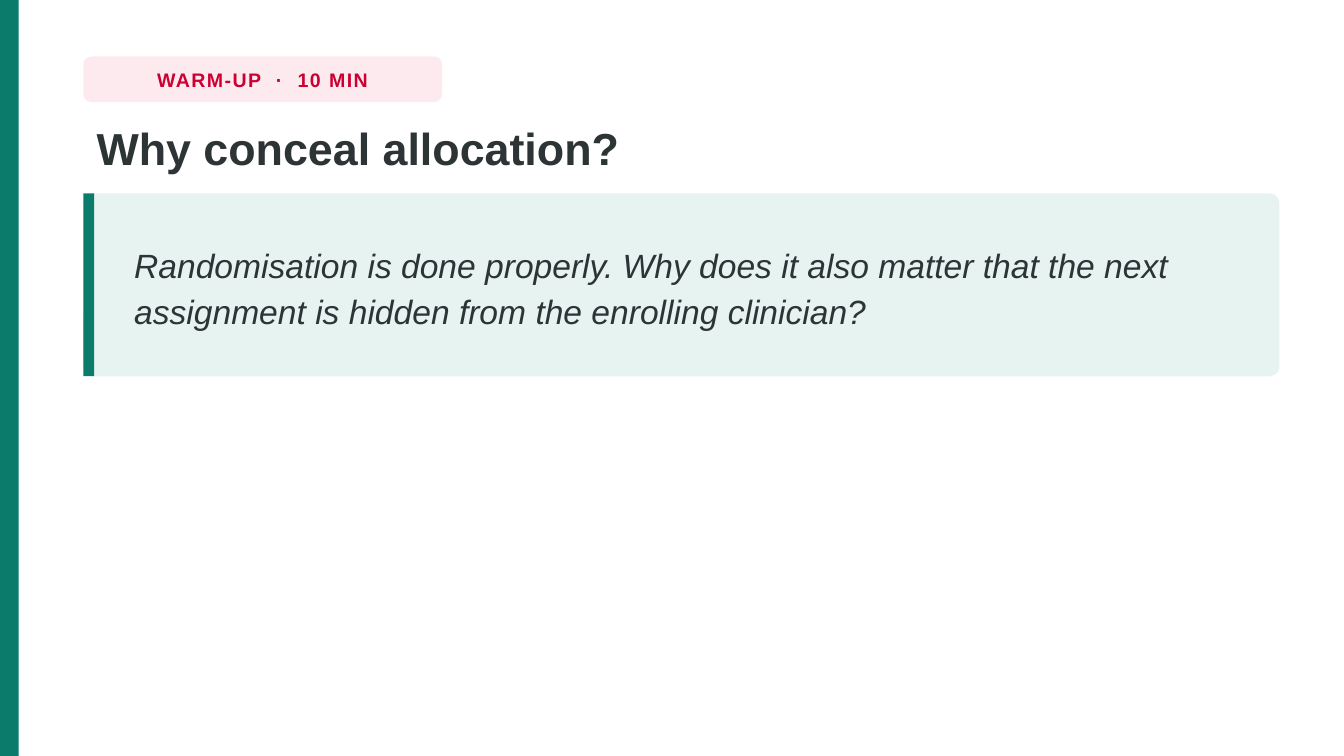
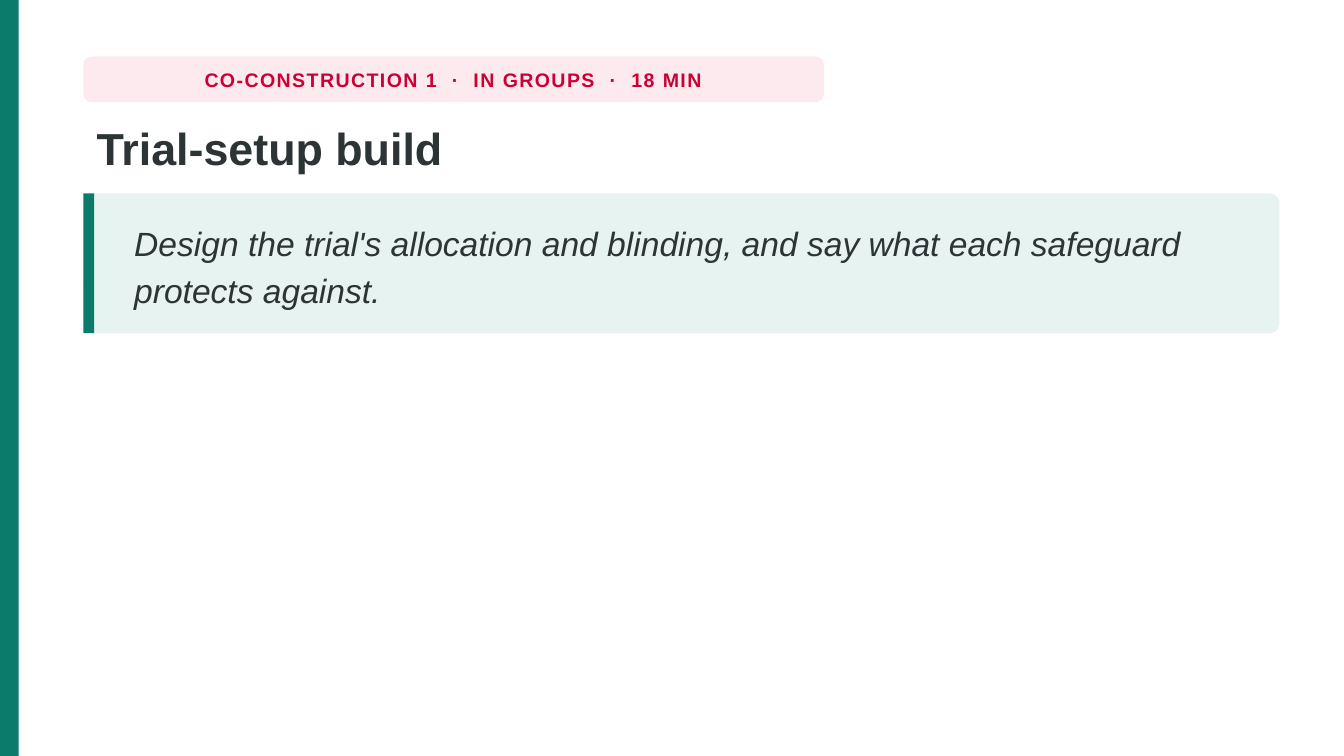
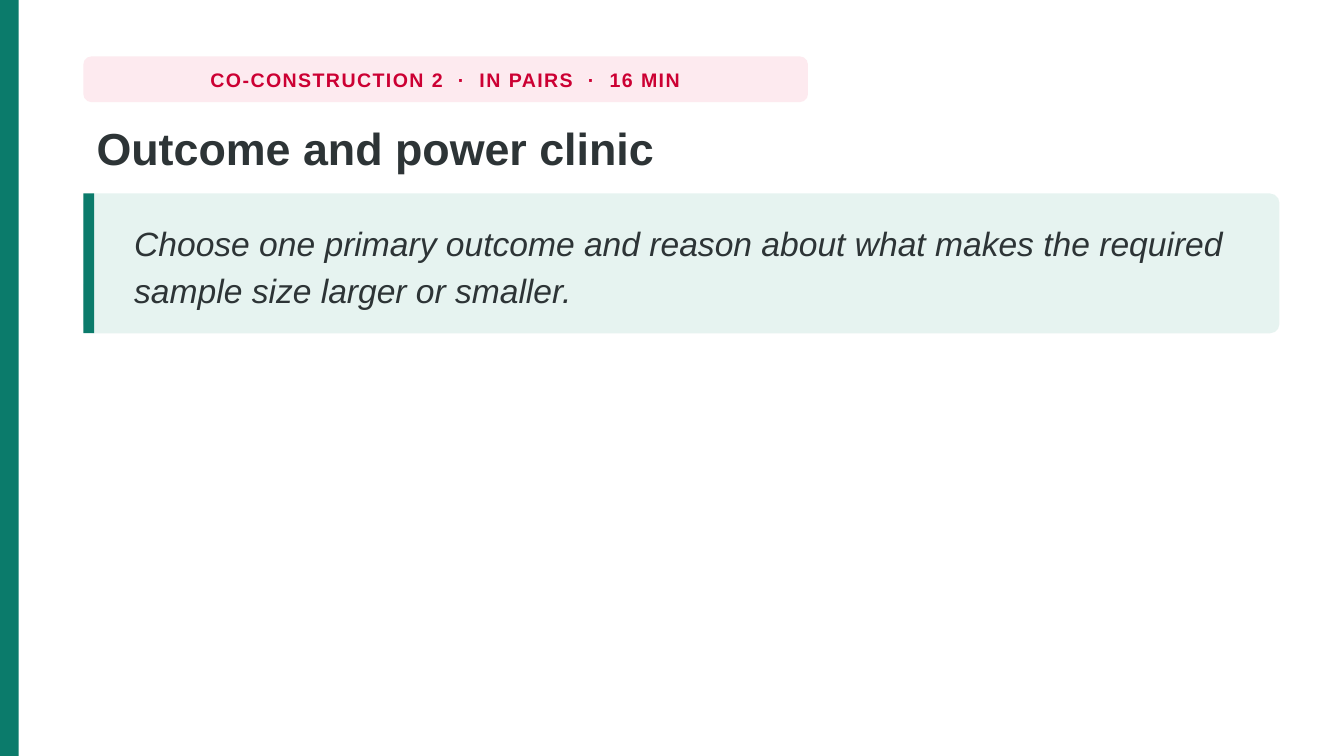
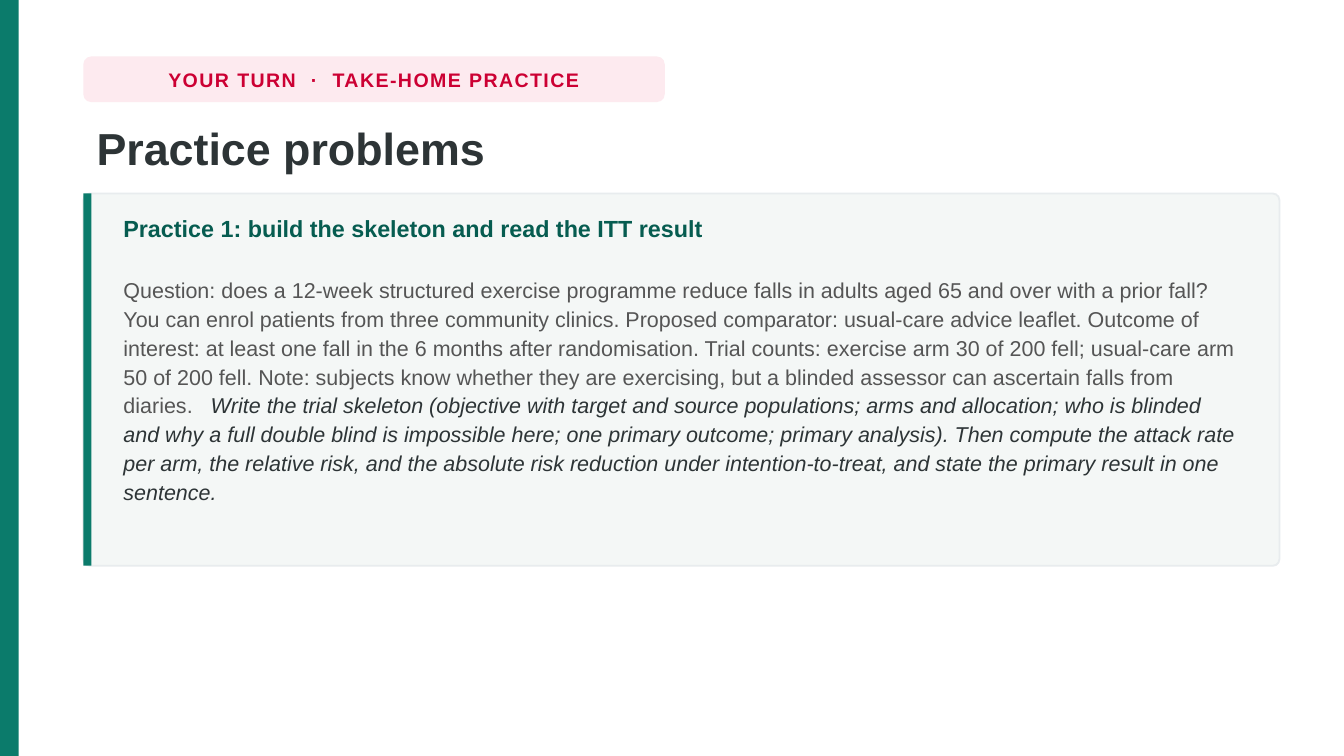
from pptx import Presentation
from pptx.dml.color import RGBColor
from pptx.enum.shapes import MSO_SHAPE
from pptx.enum.text import MSO_ANCHOR, PP_ALIGN
from pptx.util import Pt

GREEN, DARK_GREEN, MINT = "0B7B6B", "065C50", "E6F3F0"
RED, PINK = "CC0033", "FDEAEF"
INK, GREY, PALE, BORDER = "2D3436", "555555", "F4F7F6", "E8ECEE"
FONT = "Arial"
SLIDE_WIDTH, SLIDE_HEIGHT = 720, 405
LEFT, CONTENT_WIDTH = 44.64, 640.8
CARD_TOP = 103.68

PROMPTS = [
    ("WARM-UP  ·  10 MIN", "Why conceal allocation?", 97.92,
     "Randomisation is done properly. Why does it also matter that the next "
     "assignment is hidden from the enrolling clinician?"),
    ("CO-CONSTRUCTION 1  ·  IN GROUPS  ·  18 MIN", "Trial-setup build", 74.88,
     "Design the trial's allocation and blinding, and say what each safeguard "
     "protects against."),
    ("CO-CONSTRUCTION 2  ·  IN PAIRS  ·  16 MIN", "Outcome and power clinic", 74.88,
     "Choose one primary outcome and reason about what makes the required "
     "sample size larger or smaller."),
]
PRACTICE_HEADING = "Practice 1: build the skeleton and read the ITT result"
PRACTICE_CASE = (
    "Question: does a 12-week structured exercise programme reduce falls in adults "
    "aged 65 and over with a prior fall? You can enrol patients from three community "
    "clinics. Proposed comparator: usual-care advice leaflet. Outcome of interest: at "
    "least one fall in the 6 months after randomisation. Trial counts: exercise arm 30 "
    "of 200 fell; usual-care arm 50 of 200 fell. Note: subjects know whether they are "
    "exercising, but a blinded assessor can ascertain falls from diaries."
)
PRACTICE_TASK = (
    "Write the trial skeleton (objective with target and source populations; arms and "
    "allocation; who is blinded and why a full double blind is impossible here; one "
    "primary outcome; primary analysis). Then compute the attack rate per arm, the "
    "relative risk, and the absolute risk reduction under intention-to-treat, and state "
    "the primary result in one sentence."
)


def rgb(value):
    """Turn a hex string into a colour."""
    return RGBColor.from_string(value)


def add_panel(slide, left, top, width, height, fill, radius=0, border=None):
    """Draw a filled rectangle, rounded when a corner radius is given."""
    kind = MSO_SHAPE.ROUNDED_RECTANGLE if radius else MSO_SHAPE.RECTANGLE
    panel = slide.shapes.add_shape(kind, Pt(left), Pt(top), Pt(width), Pt(height))
    panel.shadow.inherit = False
    panel.fill.solid()
    panel.fill.fore_color.rgb = rgb(fill)
    if radius:
        panel.adjustments[0] = radius / min(width, height)
    if border:
        panel.line.color.rgb = rgb(border)
        panel.line.width = Pt(1)
    else:
        panel.line.fill.background()


def add_frame(slide, left, top, width, height, anchor=MSO_ANCHOR.TOP, wrap=True):
    """Add a text box and return its text frame."""
    frame = slide.shapes.add_textbox(Pt(left), Pt(top), Pt(width), Pt(height)).text_frame
    frame.word_wrap = wrap
    frame.vertical_anchor = anchor
    return frame


def style_font(font, size, color, bold=False, italic=False):
    """Set the typeface, size, colour and style of a font."""
    font.name, font.size = FONT, Pt(size)
    font.bold, font.italic = bold, italic
    font.color.rgb = rgb(color)


def write(paragraph, text, size, color, spacing=None, **style):
    """Fill a paragraph with text in a single style."""
    paragraph.text = text
    paragraph.line_spacing = spacing
    style_font(paragraph.font, size, color, **style)


def track(run, points):
    """Set the letter spacing of a run."""
    run.font._element.set("spc", str(round(points * 100)))


def add_chip(slide, label):
    """Add the activity label on a chip as wide as its text needs."""
    box = LEFT, 30.24, 38.88 + 8.52 * len(label), 24.48
    add_panel(slide, *box, PINK, radius=4.32)
    paragraph = add_frame(slide, *box, MSO_ANCHOR.MIDDLE, wrap=False).paragraphs[0]
    write(paragraph, label, 10.5, RED, bold=True)
    paragraph.alignment = PP_ALIGN.CENTER
    track(paragraph.runs[0], 0.8)


def add_activity_slide(deck, label, title):
    """Add a slide with the side band, chip and title."""
    slide = deck.slides.add_slide(deck.slide_layouts[6])
    add_panel(slide, 0, 0, 10.08, SLIDE_HEIGHT, GREEN)
    add_chip(slide, label)
    heading = add_frame(slide, LEFT, 60.48, CONTENT_WIDTH, 40.32)
    write(heading.paragraphs[0], title, 24, INK, 1.02, bold=True)
    return slide


def add_card(slide, height, fill, radius, accent_width, border=None):
    """Add a content card with an accent along its left edge."""
    add_panel(slide, LEFT, CARD_TOP, CONTENT_WIDTH, height, fill, radius, border)
    add_panel(slide, LEFT, CARD_TOP, accent_width, height, GREEN)


def add_prompt(slide, height, question):
    """Add a card with a question in italics."""
    add_card(slide, height, MINT, 5.04, 5.76)
    inset = 3.6
    frame = add_frame(slide, 64.8, CARD_TOP + inset, 601.2, height - 2 * inset,
                      MSO_ANCHOR.MIDDLE)
    write(frame.paragraphs[0], question, 18, INK, 1.16, italic=True)


def add_practice(slide, heading, case, task):
    """Add a card with a heading, a case and the task that follows it."""
    height, inset = 199.44, 5.76
    add_card(slide, height, PALE, 3.6, 4.32, BORDER)
    frame = add_frame(slide, 59.04, CARD_TOP + inset, 610.56, height - 2 * inset)
    heading_line = frame.paragraphs[0]
    write(heading_line, heading, 12.5, DARK_GREEN, 1.12, bold=True)
    heading_line.space_after = Pt(17)
    body = frame.add_paragraph()
    body.line_spacing = 1.12
    for text, color, italic in ((case, GREY, False), (" ", GREY, False), (task, INK, True)):
        run = body.add_run()
        run.text = text
        style_font(run.font, 11.5, color, italic=italic)
    track(body.runs[1], 6.4)


def main():
    """Build the deck and save it."""
    deck = Presentation()
    deck.slide_width, deck.slide_height = Pt(SLIDE_WIDTH), Pt(SLIDE_HEIGHT)
    for label, title, height, question in PROMPTS:
        add_prompt(add_activity_slide(deck, label, title), height, question)
    practice = add_activity_slide(deck, "YOUR TURN  ·  TAKE-HOME PRACTICE", "Practice problems")
    add_practice(practice, PRACTICE_HEADING, PRACTICE_CASE, PRACTICE_TASK)
    deck.save("out.pptx")


if __name__ == "__main__":
    main()
